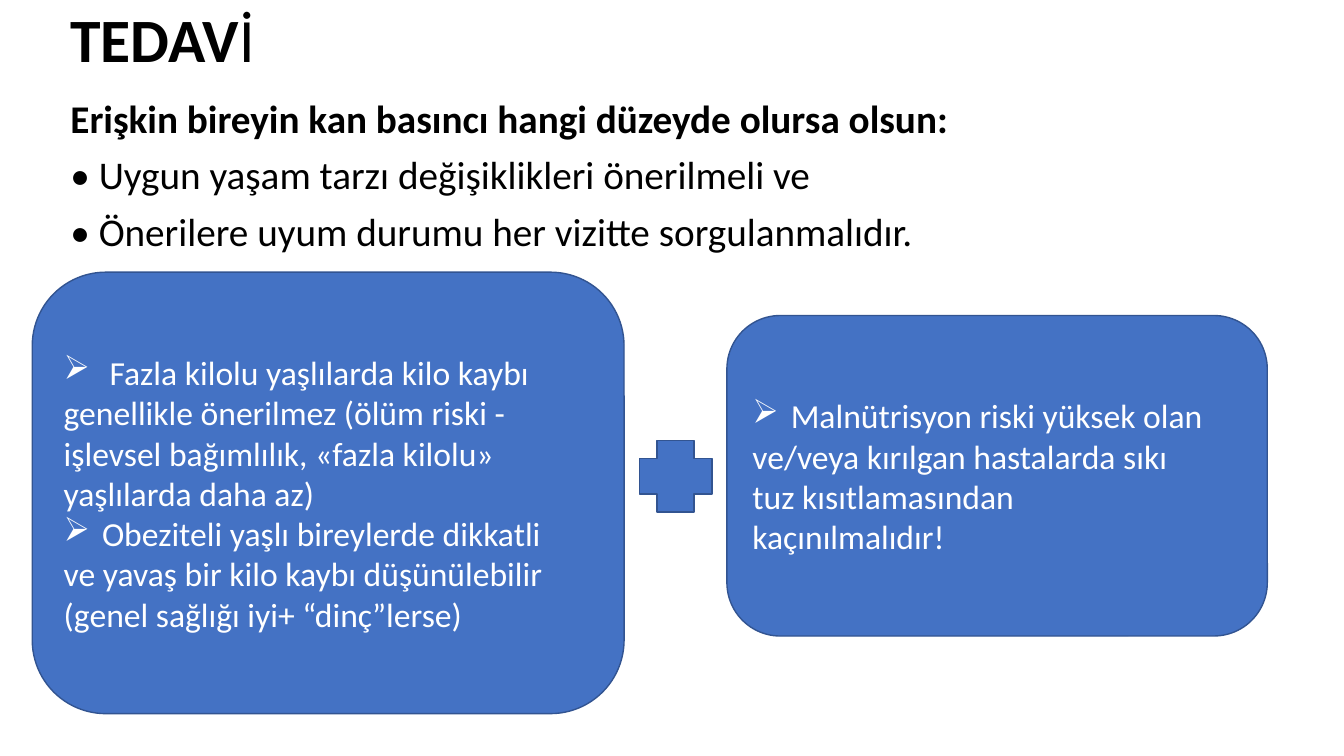
from lxml import etree
from pptx import Presentation
from pptx import util as u
from pptx.dml.color import RGBColor
from pptx.enum import shapes, text
from pptx.oxml.ns import qn

COLORS = {"ink": "000000", "paper": "FFFFFF", "panel": "4472C4", "outline": "325491"}
BULLET = "➢"

WEIGHT_ADVICE = [
    (True, " Fazla kilolu yaşlılarda kilo kaybı"),
    (False, "genellikle önerilmez (ölüm riski -"),
    (False, "işlevsel bağımlılık, «fazla kilolu»"),
    (False, "yaşlılarda daha az)"),
    (True, "Obeziteli yaşlı bireylerde dikkatli"),
    (False, "ve yavaş bir kilo kaybı düşünülebilir"),
    (False, "(genel sağlığı iyi+ “dinç”lerse)"),
]
SALT_ADVICE = [
    (True, "Malnütrisyon riski yüksek olan"),
    (False, "ve/veya kırılgan hastalarda sıkı"),
    (False, "tuz kısıtlamasından"),
    (False, "kaçınılmalıdır!"),
]


class SlideWriter:
    font_name = "Calibri"

    def __init__(self, page):
        self.page = page

    def color(self, name):
        return RGBColor.from_string(COLORS[name])

    def style(self, font, size, color, bold=False):
        font.name = self.font_name
        font.size = u.Pt(size)
        font.bold = bold
        font.color.rgb = self.color(color)

    def textbox(self, place, paragraphs, size, anchor=text.MSO_ANCHOR.TOP):
        box = self.page.shapes.add_textbox(*map(u.Inches, place))
        frame = box.text_frame
        frame.word_wrap = True
        frame.vertical_anchor = anchor
        for index, spans in enumerate(paragraphs):
            para = frame.add_paragraph() if index else frame.paragraphs[0]
            para.line_spacing = 0.9
            para.space_before = u.Pt(10 if index else 0)
            for words, bold in spans:
                span = para.add_run()
                span.text = words
                self.style(span.font, size, "ink", bold)

    def shape(self, kind, place):
        shape = self.page.shapes.add_shape(kind, *map(u.Inches, place))
        shape.shadow.inherit = False
        shape.fill.solid()
        shape.fill.fore_color.rgb = self.color("panel")
        shape.line.color.rgb = self.color("outline")
        shape.line.width = u.Pt(1)
        return shape

    def bullet(self, para):
        properties = para._p.get_or_add_pPr()
        properties.set("marL", str(u.Inches(0.38)))
        properties.set("indent", str(u.Inches(-0.38)))
        etree.SubElement(properties, qn("a:buChar")).set("char", BULLET)

    def panel(self, place, lines):
        panel = self.shape(shapes.MSO_SHAPE.ROUNDED_RECTANGLE, place)
        frame = panel.text_frame
        frame.word_wrap = True
        frame.vertical_anchor = text.MSO_ANCHOR.MIDDLE
        frame.text = "\n".join(words for _, words in lines)
        for para, (bulleted, _) in zip(frame.paragraphs, lines):
            para.alignment = text.PP_ALIGN.LEFT
            if bulleted:
                self.bullet(para)
            for span in para.runs:
                self.style(span.font, 24, "paper")


def main():
    deck = Presentation()
    deck.slide_width = u.Inches(13.33)
    deck.slide_height = u.Inches(7.5)
    page = deck.slides.add_slide(deck.slide_layouts[6])
    page.background.fill.solid()
    page.background.fill.fore_color.rgb = RGBColor.from_string(COLORS["paper"])

    writer = SlideWriter(page)
    writer.textbox((0.6, -0.3, 11.5, 1.45), [[("TEDAV", True), ("İ", False)]],
                   44, text.MSO_ANCHOR.MIDDLE)
    writer.textbox((0.6, 0.94, 11.82, 6.3), [
        [("Erişkin bireyin kan basıncı hangi düzeyde olursa olsun:", True)],
        [("• Uygun yaşam tarzı değişiklikleri önerilmeli ve", False)],
        [("• Önerilere uyum durumu her vizitte sorgulanmalıdır.", False)],
    ], 28)
    writer.panel((0.32, 2.7, 5.87, 4.38), WEIGHT_ADVICE)
    writer.panel((7.21, 3.13, 5.36, 3.18), SALT_ADVICE)
    writer.shape(shapes.MSO_SHAPE.CROSS, (6.34, 4.37, 0.72, 0.71))
    deck.save("out.pptx")


if __name__ == "__main__":
    main()
